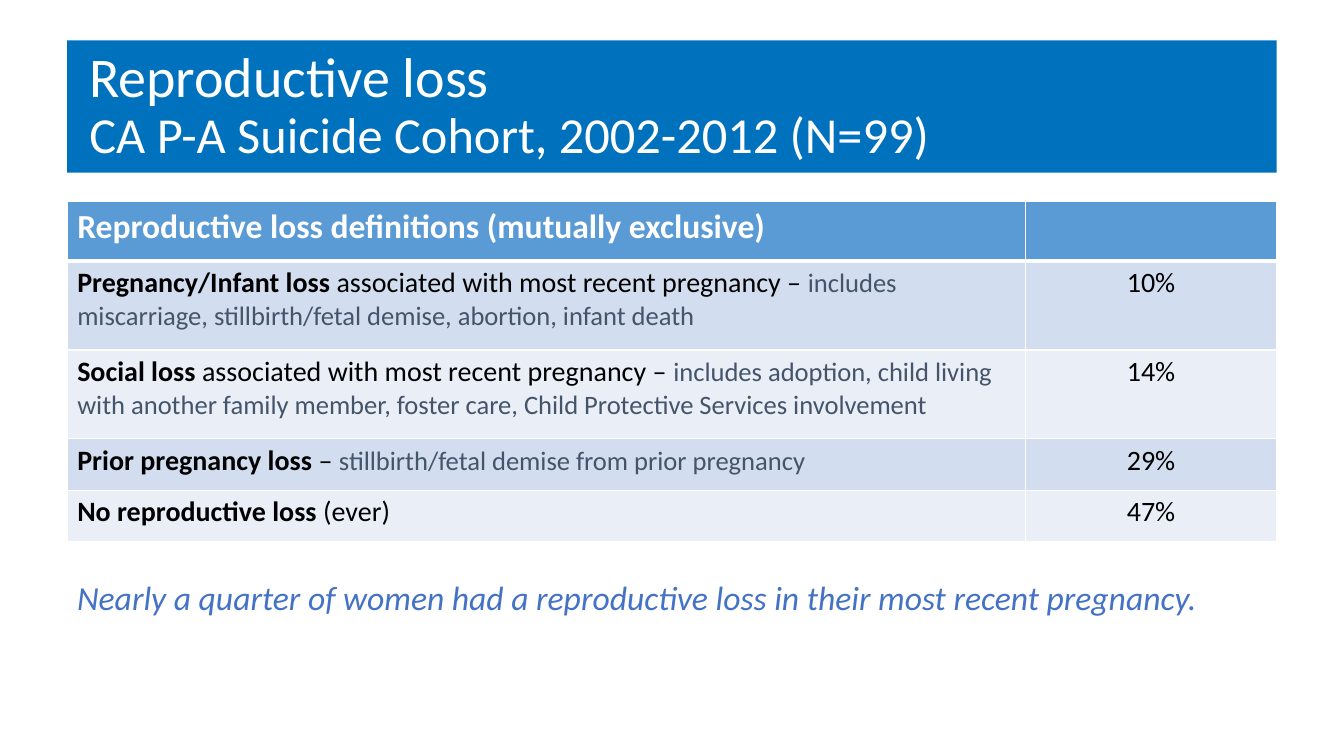
from lxml import etree
from pptx import Presentation
from pptx.dml.color import RGBColor
from pptx.enum.text import MSO_ANCHOR, MSO_AUTO_SIZE, PP_ALIGN
from pptx.oxml.ns import qn
from pptx.util import Pt

LEFT, CENTER = PP_ALIGN.LEFT, PP_ALIGN.CENTER
MIDDLE = MSO_ANCHOR.MIDDLE
NO_AUTOFIT = MSO_AUTO_SIZE.NONE

FONT = "Calibri"
COLORS = {
    "banner": "0071BC", "header": "5B9BD5", "band_dark": "D2DEEF",
    "band_light": "EAEFF7", "white": "FFFFFF", "black": "000000",
    "detail": "44546A", "conclusion": "4472C4",
}

TITLE = "Reproductive loss"
SUBTITLE = "CA P-A Suicide Cohort, 2002-2012 (N=99)"
HEADING = "Reproductive loss definitions (mutually exclusive)"
# name of the loss, plain words, detail, share of the cohort
LOSSES = [
    ("Pregnancy/Infant loss ", "associated with most recent pregnancy – ",
     "includes miscarriage, stillbirth/fetal demise, abortion, infant death", "10%"),
    ("Social loss ", "associated with most recent pregnancy – ",
     "includes adoption, child living with another family member, foster care, "
     "Child Protective Services involvement", "14%"),
    ("Prior pregnancy loss", " – ",
     "stillbirth/fetal demise from prior pregnancy", "29%"),
    ("No reproductive loss ", "(ever)", "", "47%"),
]
CONCLUSION = "Nearly a quarter of women had a reproductive loss in their most recent pregnancy."

MARGIN, CONTENT_WIDTH = 48, 864
TITLE_TOP, TITLE_HEIGHT, TITLE_INDENT = 28.8, 94.5, 8.64
TABLE_TOP = 144
COLUMN_WIDTHS = [684.5, 179.5]
ROW_HEIGHTS = [42.5, 63.5, 63.5, 36.6, 36.6]
CONCLUSION_TOP, CONCLUSION_HEIGHT = 408.5, 36
THIN, THICK = 1, 3


def add_text(paragraph, text, size, color, bold=False, italic=False):
    run = paragraph.add_run()
    run.text = text
    run.font.name = FONT
    run.font.size = Pt(size)
    run.font.bold = bold
    run.font.italic = italic
    run.font.color.rgb = RGBColor.from_string(COLORS[color])


def fill_solid(target, color):
    target.fill.solid()
    target.fill.fore_color.rgb = RGBColor.from_string(COLORS[color])


def add_borders(cell, top, bottom):
    properties = cell._tc.get_or_add_tcPr()
    for side, width in (("L", THIN), ("R", THIN), ("T", top), ("B", bottom)):
        line = etree.SubElement(properties, qn(f"a:ln{side}"), w=str(Pt(width)))
        fill = etree.SubElement(line, qn("a:solidFill"))
        etree.SubElement(fill, qn("a:srgbClr"), val=COLORS["white"])


def add_title(slide):
    title = slide.shapes.title
    title.left, title.top = Pt(MARGIN), Pt(TITLE_TOP)
    title.width, title.height = Pt(CONTENT_WIDTH), Pt(TITLE_HEIGHT)
    fill_solid(title, "banner")
    frame = title.text_frame
    frame.auto_size = NO_AUTOFIT
    frame.vertical_anchor = MIDDLE
    paragraph = frame.paragraphs[0]
    paragraph.alignment = LEFT
    paragraph.line_spacing = 0.9
    paragraph_properties = paragraph._p.get_or_add_pPr()
    paragraph_properties.set("marL", str(Pt(TITLE_INDENT)))
    paragraph_properties.set("indent", "0")
    add_text(paragraph, TITLE, 40, "white")
    paragraph.add_line_break()
    add_text(paragraph, SUBTITLE, 36, "white")


def add_loss_table(slide):
    table = slide.shapes.add_table(
        len(ROW_HEIGHTS), len(COLUMN_WIDTHS), Pt(MARGIN), Pt(TABLE_TOP),
        Pt(CONTENT_WIDTH), Pt(sum(ROW_HEIGHTS))).table
    for column, width in zip(table.columns, COLUMN_WIDTHS):
        column.width = Pt(width)
    for index, (row, height) in enumerate(zip(table.rows, ROW_HEIGHTS)):
        row.height = Pt(height)
        band = "band_dark" if index % 2 else "band_light"
        for cell in row.cells:
            add_borders(cell, top=THICK if index == 1 else THIN,
                        bottom=THICK if index == 0 else THIN)
            fill_solid(cell, band if index else "header")

    add_text(table.cell(0, 0).text_frame.paragraphs[0], HEADING, 24, "white", bold=True)
    for index, (name, words, detail, share) in enumerate(LOSSES, start=1):
        definition = table.cell(index, 0).text_frame.paragraphs[0]
        add_text(definition, name, 20, "black", bold=True)
        add_text(definition, words, 20, "black")
        if detail:
            add_text(definition, detail, 19, "detail")
        percentage = table.cell(index, 1).text_frame.paragraphs[0]
        percentage.alignment = CENTER
        add_text(percentage, share, 20, "black")


def add_conclusion(slide):
    box = slide.shapes.add_textbox(Pt(MARGIN), Pt(CONCLUSION_TOP),
                                   Pt(CONTENT_WIDTH), Pt(CONCLUSION_HEIGHT))
    box.text_frame.word_wrap = True
    add_text(box.text_frame.paragraphs[0], CONCLUSION, 24, "conclusion", italic=True)


def main():
    presentation = Presentation()
    presentation.slide_width, presentation.slide_height = Pt(960), Pt(540)
    title_only = presentation.slide_layouts[5]
    slide = presentation.slides.add_slide(title_only)
    add_title(slide)
    add_loss_table(slide)
    add_conclusion(slide)
    presentation.save("out.pptx")


if __name__ == "__main__":
    main()
